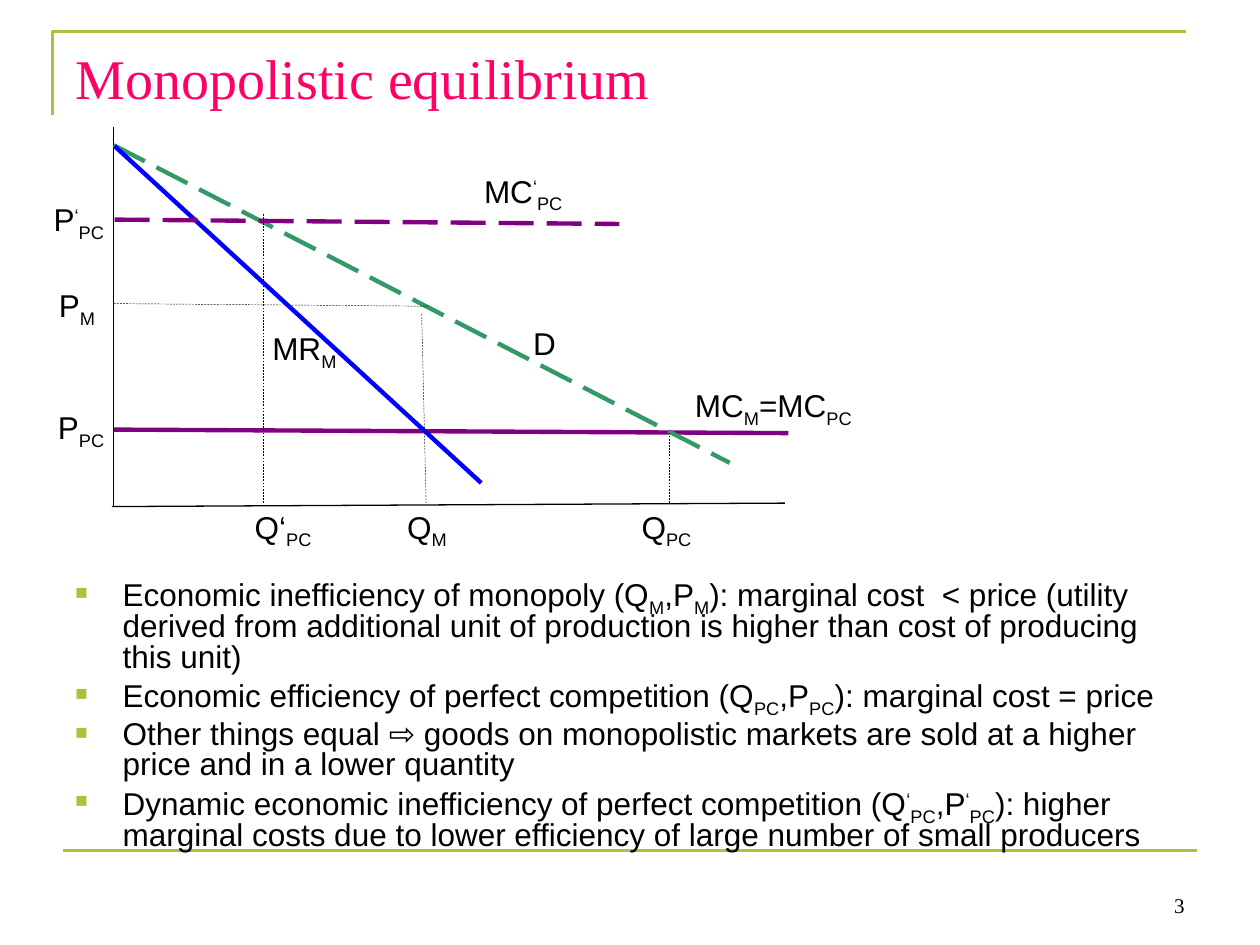
import dataclasses
import typing

import lxml.etree
import pptx
import pptx.dml.color
import pptx.enum.dml
import pptx.enum.text
import pptx.oxml.ns
import pptx.util

Pt = pptx.util.Pt
Dash = pptx.enum.dml.MSO_LINE
Align = pptx.enum.text.PP_ALIGN
Anchor = pptx.enum.text.MSO_ANCHOR


@dataclasses.dataclass(frozen=True)
class Theme:
    sans: str = "Arial"
    serif: str = "Times New Roman"
    ink: str = "000000"
    title: str = "FF0066"
    frame: str = "AFBF39"
    cost: str = "800080"
    demand: str = "339966"
    revenue: str = "0000FF"
    head: float = 32
    text: float = 18
    page: float = 12


THEME = Theme()


class Style(typing.NamedTuple):
    color: str
    width: float
    dash: typing.Any = None


class Line(typing.NamedTuple):
    x1: float
    y1: float
    x2: float
    y2: float
    style: Style


class Label(typing.NamedTuple):
    text: str
    x: float
    y: float
    width: float


RULE = Style(THEME.frame, 1.5)
AXIS = Style(THEME.ink, 0.75)
GUIDE = Style(THEME.ink, 0.25, Dash.DASH)
COST = Style(THEME.cost, 2.5)

LINES = [
    Line(36, 486, 684, 486, RULE),
    Line(65, 72.5, 65, 289.5, AXIS),
    Line(64, 289.5, 448.5, 287.5, AXIS),
    Line(65, 245.5, 450.5, 247.5, COST),
    Line(65, 83, 417, 264.5, Style(THEME.demand, 2.5, Dash.LONG_DASH)),
    Line(65.5, 83.5, 275, 276, Style(THEME.revenue, 2.5)),
    Line(243.5, 287.5, 241, 179.5, GUIDE),
    Line(65, 173.5, 245, 175, GUIDE),
    Line(65.5, 125.5, 354, 128, COST._replace(dash=Dash.LONG_DASH)),
    Line(382.5, 287.5, 382.5, 247.5, GUIDE),
    Line(150.5, 287.5, 150.5, 122.5, GUIDE),
]

# In marked text, "|" parts the runs; "_" opens a subscript, "^" a superscript.
LABELS = [
    Label("MR|_M", 148.5, 184.5, 54.5),
    Label("MC|_M|=MC|_PC", 390, 217, 113),
    Label("Q|_M", 225.5, 286.5, 46),
    Label("P|_M", 26.5, 160, 54.5),
    Label("D", 297.5, 181.5, 34),
    Label("Q|_PC", 359.5, 286.5, 46),
    Label("P|_PC", 26, 229.5, 45.5),
    Label("MC|^‘|_PC", 269.5, 94.5, 79),
    Label("Q‘|_PC", 138.5, 286.5, 52),
    Label("P|^‘|_PC", 23.5, 111, 54),
]

POINTS = [
    "Economic inefficiency of monopoly (Q|_M|,P|_M|): marginal cost  < price "
    "(utility derived from additional unit of production is higher than cost "
    "of producing this unit)",
    "Economic efficiency of perfect competition (Q|_PC|,P|_PC|): marginal cost = price",
    "Other things equal ⇨ goods on monopolistic markets are sold at a higher "
    "price and in a lower quantity",
    "Dynamic economic inefficiency of perfect competition (Q|^‘|_PC|,P|^‘|_PC|): "
    "higher marginal costs due to lower efficiency of large number of small producers",
]


def paint(color: str) -> pptx.dml.color.RGBColor:
    return pptx.dml.color.RGBColor.from_string(color)


def apply(item: typing.Any, form: dict) -> None:
    for name, value in form.items():
        setattr(item, name, value)


def write(para, text: str, size: float = THEME.text, face: str = THEME.sans,
          color: str = THEME.ink) -> None:
    """Add marked text to a paragraph as formatted runs."""
    shift = {"_": "-25000", "^": "30000"}
    for part in text.split("|"):
        base = shift.get(part[0])
        run = para.add_run()
        run.text = part[1:] if base else part
        apply(run.font, {"size": Pt(size), "name": face})
        run.font.color.rgb = paint(color)
        if base:
            run._r.get_or_add_rPr().set("baseline", base)


def add_box(slide, x: float, y: float, width: float, height: float):
    frame = slide.shapes.add_textbox(Pt(x), Pt(y), Pt(width), Pt(height)).text_frame
    frame.word_wrap = True
    return frame


def stroke(line, style: Style) -> None:
    line.color.rgb = paint(style.color)
    apply(line, {"width": Pt(style.width), "dash_style": style.dash})


def draw_line(slide, item: Line) -> None:
    ends = [Pt(v) for v in item[:4]]
    shape = slide.shapes.add_connector(pptx.enum.shapes.MSO_CONNECTOR.STRAIGHT, *ends)
    stroke(shape.line, item.style)
    lxml.etree.SubElement(shape._element.spPr, pptx.oxml.ns.qn("a:effectLst"))


def draw_frame(slide) -> None:
    path = slide.shapes.build_freeform(Pt(30), Pt(66))
    path.add_line_segments([(Pt(30), Pt(18)), (Pt(678), Pt(18))], close=False)
    shape = path.convert_to_shape()
    shape.shadow.inherit = False
    shape.fill.background()
    stroke(shape.line, RULE)


def set_title(slide, text: str) -> None:
    title = slide.shapes.title
    apply(title, {"left": Pt(36), "top": Pt(21.5), "width": Pt(648), "height": Pt(67)})
    apply(title.text_frame, {"vertical_anchor": Anchor.TOP,
                             "auto_size": pptx.enum.text.MSO_AUTO_SIZE.NONE})
    para = title.text_frame.paragraphs[0]
    para.alignment = Align.LEFT
    write(para, text, THEME.head, THEME.serif, THEME.title)


def set_bullet(para) -> None:
    props = para._p.get_or_add_pPr()
    apply(para, {"line_spacing": 0.8, "space_before": Pt(3.6)})
    for name, value in {"marL": Pt(27), "indent": Pt(-27)}.items():
        props.set(name, str(int(value)))
    qn = pptx.oxml.ns.qn
    color = lxml.etree.SubElement(props, qn("a:buClr"))
    lxml.etree.SubElement(color, qn("a:srgbClr"), val=THEME.frame)
    lxml.etree.SubElement(props, qn("a:buSzPct"), val="65000")
    lxml.etree.SubElement(props, qn("a:buFont"), typeface=THEME.sans)
    lxml.etree.SubElement(props, qn("a:buChar"), char="■")


def draw_list(slide, points: list[str]) -> None:
    frame = add_box(slide, 36, 327.5, 648, 163.5)
    for i, text in enumerate(points):
        para = frame.add_paragraph() if i else frame.paragraphs[0]
        set_bullet(para)
        write(para, text)


def main() -> None:
    deck = pptx.Presentation()
    apply(deck, {"slide_width": Pt(720), "slide_height": Pt(540)})
    slide = deck.slides.add_slide(deck.slide_layouts[5])
    draw_frame(slide)
    set_title(slide, "Monopolistic equilibrium")
    for item in LINES:
        draw_line(slide, item)
    for label in LABELS:
        frame = add_box(slide, label.x, label.y, label.width, 29)
        write(frame.paragraphs[0], label.text)
    draw_list(slide, POINTS)
    page = add_box(slide, 516, 492, 168, 36)
    page.vertical_anchor = Anchor.BOTTOM
    page.paragraphs[0].alignment = Align.RIGHT
    write(page.paragraphs[0], "3", THEME.page, THEME.serif)
    deck.save("out.pptx")


if __name__ == "__main__":
    main()
